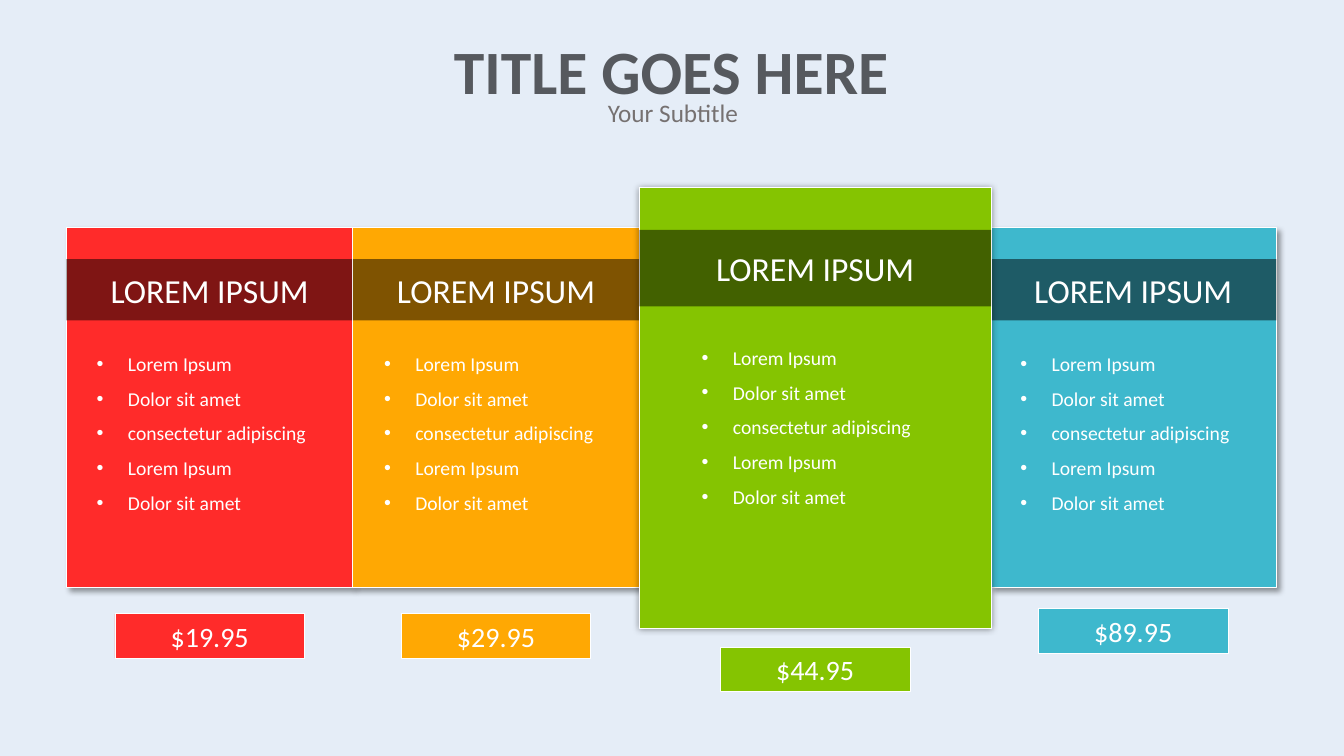
import pptx
import pptx.util
from pptx.dml.color import RGBColor
from pptx.enum.shapes import MSO_SHAPE
from pptx.enum.text import MSO_ANCHOR, MSO_AUTO_SIZE, PP_ALIGN
from lxml import etree

Inches, Pt = pptx.util.Inches, pptx.util.Pt
WHITE = RGBColor(0xFF, 0xFF, 0xFF)
BLACK = RGBColor(0, 0, 0)
BACKGROUND = RGBColor(0xE5, 0xED, 0xF7)
TITLE_GRAY = RGBColor(0x56, 0x59, 0x5E)
SUBTITLE_GRAY = RGBColor(0x76, 0x71, 0x71)
TEAL = RGBColor(0x3E, 0xB8, 0xCD)
RED = RGBColor(0xFF, 0x2B, 0x2A)
ORANGE = RGBColor(0xFF, 0xA8, 0x03)
GREEN = RGBColor(0x85, 0xC4, 0x01)

TITLE = "TITLE GOES HERE"
SUBTITLE = "Your Subtitle"
HEADING = "LOREM IPSUM"
FEATURES = ["Lorem Ipsum", "Dolor sit amet", "consectetur adipiscing",
            "Lorem Ipsum", "Dolor sit amet"]

STANDARD = {"top": 2.26, "width": 2.84, "height": 3.57, "band_top": 2.57,
            "band_height": 0.61, "list_top": 3.29, "shadow": (4, 3, 45)}
FEATURED = {"top": 1.86, "width": 3.49, "height": 4.37, "band_top": 2.28,
            "band_height": 0.76, "list_top": 3.23, "shadow": (5, 0, 0)}
PLANS = [
    {"price": "$89.95", "color": TEAL, "left": 9.82, "list_left": 9.92, "price_top": 6.04, **STANDARD},
    {"price": "$19.95", "color": RED, "left": 0.66, "list_left": 0.76, "price_top": 6.09, **STANDARD},
    {"price": "$29.95", "color": ORANGE, "left": 3.5, "list_left": 3.61, "price_top": 6.09, **STANDARD},
    {"price": "$44.95", "color": GREEN, "left": 6.34, "list_left": 6.76, "price_top": 6.42, **FEATURED},
]
PRICE_WIDTH, PRICE_HEIGHT = 1.88, 0.44
LIST_WIDTH, LIST_HEIGHT = 2.57, 2.46
LIST_INSETS = {"margin_left": 0.2, "margin_top": 0.2, "margin_right": 0.1, "margin_bottom": 0.05}


def add_xml(parent, tag, **attrs):
    return etree.SubElement(parent, pptx.oxml.ns.qn(tag), attrs)


def set_font(p, size, color, bold=False):
    values = {"name": "Calibri", "size": Pt(size), "bold": bold}
    for name, value in values.items():
        setattr(p.font, name, value)
    p.font.color.rgb = color


def write_line(sp, text, size, color, bold=False, anchor=MSO_ANCHOR.MIDDLE):
    tf = sp.text_frame
    values = {"word_wrap": True, "auto_size": MSO_AUTO_SIZE.NONE, "vertical_anchor": anchor}
    for name, value in values.items():
        setattr(tf, name, value)
    p = tf.paragraphs[0]
    p.text = text
    p.alignment = PP_ALIGN.CENTER
    set_font(p, size, color, bold)


def add_box(s, left, top, width, height, color, outlined=True):
    sp = s.shapes.add_shape(MSO_SHAPE.RECTANGLE, *map(Inches, (left, top, width, height)))
    sp.shadow.inherit = False
    sp.fill.solid()
    sp.fill.fore_color.rgb = color
    if outlined:
        sp.line.color.rgb = WHITE
        sp.line.width = Pt(0.5)
    else:
        sp.line.fill.background()
    return sp


def add_shadow(sp, blur, distance, angle):
    effects = sp._element.spPr.find(pptx.oxml.ns.qn("a:effectLst"))
    shadow = add_xml(effects, "a:outerShdw", blurRad=str(Pt(blur)), dist=str(Pt(distance)),
                     dir=str(angle * 60000), algn="ctr", rotWithShape="0")
    add_xml(add_xml(shadow, "a:srgbClr", val="000000"), "a:alpha", val="40000")


def add_band(s, left, top, width, height):
    sp = add_box(s, left, top, width, height, BLACK, outlined=False)
    color = sp._element.spPr.find(".//" + pptx.oxml.ns.qn("a:srgbClr"))
    add_xml(color, "a:alpha", val="50000")
    write_line(sp, HEADING, 24, WHITE)


def add_features(s, left, top):
    sp = s.shapes.add_textbox(*map(Inches, (left, top, LIST_WIDTH, LIST_HEIGHT)))
    tf = sp.text_frame
    tf.word_wrap = True
    for name, value in LIST_INSETS.items():
        setattr(tf, name, Inches(value))
    for i, feature in enumerate(FEATURES):
        p = tf.add_paragraph() if i else tf.paragraphs[0]
        p.text = feature
        if i:
            p.space_before = Pt(8)
        pPr = p._p.get_or_add_pPr()
        pPr.set("marL", str(Inches(0.31)))
        pPr.set("indent", str(Inches(-0.31)))
        add_xml(pPr, "a:buFont", typeface="Arial")
        add_xml(pPr, "a:buChar", char="•")
        set_font(p, 14, WHITE)


def add_plan(s, plan):
    left, width = plan["left"], plan["width"]
    card = add_box(s, left, plan["top"], width, plan["height"], plan["color"])
    add_shadow(card, *plan["shadow"])
    add_band(s, left, plan["band_top"], width, plan["band_height"])
    add_features(s, plan["list_left"], plan["list_top"])
    price_left = left + (width - PRICE_WIDTH) / 2
    price = add_box(s, price_left, plan["price_top"], PRICE_WIDTH, PRICE_HEIGHT, plan["color"])
    write_line(price, plan["price"], 20, WHITE)


def main():
    prs = pptx.Presentation()
    prs.slide_width, prs.slide_height = Inches(13.33), Inches(7.5)
    s = prs.slides.add_slide(prs.slide_layouts[5])
    s.background.fill.solid()
    s.background.fill.fore_color.rgb = BACKGROUND
    title = s.shapes.title
    place = {"left": 3.65, "top": 0.28, "width": 6.02, "height": 0.84}
    for name, value in place.items():
        setattr(title, name, Inches(value))
    write_line(title, TITLE, 44, TITLE_GRAY, bold=True, anchor=MSO_ANCHOR.TOP)
    subtitle = s.shapes.add_textbox(*map(Inches, (4.41, 0.92, 4.53, 0.4)))
    write_line(subtitle, SUBTITLE, 18, SUBTITLE_GRAY, anchor=MSO_ANCHOR.TOP)
    for plan in PLANS:
        add_plan(s, plan)
    prs.save("out.pptx")


if __name__ == "__main__":
    main()
